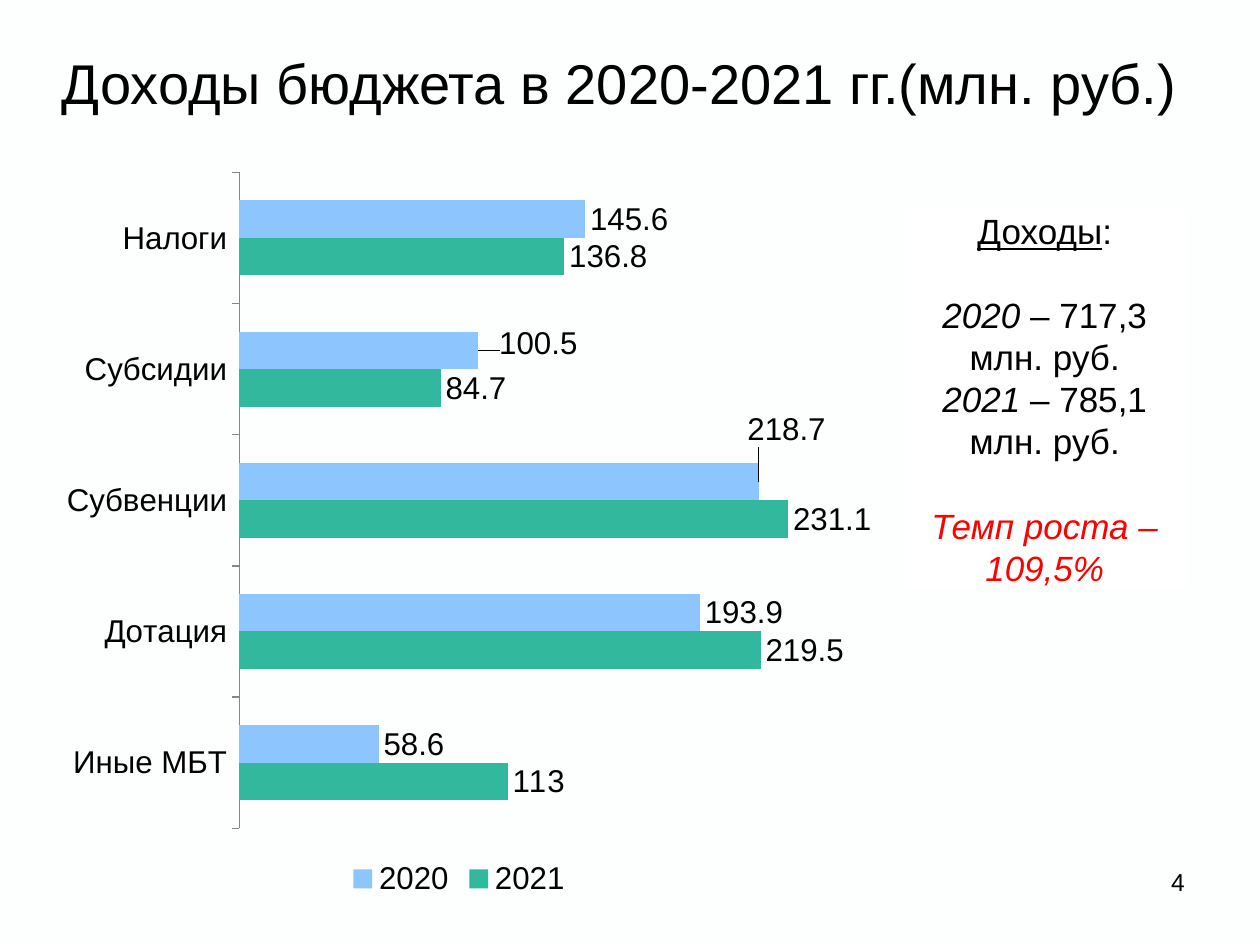
from dataclasses import dataclass

from lxml import etree
from pptx import Presentation
from pptx.chart.data import CategoryChartData
from pptx.dml.color import RGBColor
from pptx.enum.chart import XL_CHART_TYPE, XL_LABEL_POSITION, XL_LEGEND_POSITION, XL_TICK_MARK
from pptx.enum.shapes import MSO_SHAPE
from pptx.enum.text import MSO_ANCHOR, MSO_AUTO_SIZE, PP_ALIGN
from pptx.oxml.ns import qn
from pptx.util import Inches, Pt

BAR = XL_CHART_TYPE.BAR_CLUSTERED
OUTSIDE = XL_LABEL_POSITION.OUTSIDE_END
BOTTOM = XL_LEGEND_POSITION.BOTTOM
TICK_OUT = XL_TICK_MARK.OUTSIDE
RECT = MSO_SHAPE.RECTANGLE
MIDDLE = MSO_ANCHOR.MIDDLE
NO_FIT = MSO_AUTO_SIZE.NONE
CENTER, RIGHT = PP_ALIGN.CENTER, PP_ALIGN.RIGHT


@dataclass(frozen=True)
class Theme:
    """Colours, font and type sizes of the slide."""
    font: str = "Arial"
    ink: str = "000000"
    accent: str = "FF0000"
    back: str = "FDFFFE"
    panel: str = "FFFFFF"
    axis: str = "868686"
    title: int = 32
    body: int = 20
    chart: int = 18
    number: int = 14


THEME = Theme()
WIDTH, HEIGHT = Inches(10), Inches(7.5)
COLS, ROWS = 60, 45
CATEGORIES = ["Иные МБТ", "Дотация", "Субвенции", "Субсидии", "Налоги"]
SERIES = [
    ("2021", [113, 219.5, 231.1, 84.7, 136.8], "32B89C"),
    ("2020", [58.6, 193.9, 218.7, 100.5, 145.6], "8DC6FF"),
]
LABEL_SHIFTS = {2: (-0.02, -0.07), 3: (0.02, -0.01)}
TOTALS = [("2020 ", "– 717,3 млн. руб."), ("2021 ", "– 785,1 млн. руб.")]


def grid(col, row, cols, rows):
    """Return the box that covers the given grid cells."""
    x, y = WIDTH / COLS, HEIGHT / ROWS
    return round(col * x), round(row * y), round(cols * x), round(rows * y)


def rgb(colour):
    """Return a colour object for a hex string."""
    return RGBColor.from_string(colour)


def add_text(p, text, size=THEME.body, colour=THEME.ink, italic=False, underline=False):
    """Add one formatted run to a paragraph."""
    r = p.add_run()
    r.text = text
    r.font.name, r.font.size = THEME.font, Pt(size)
    r.font.color.rgb = rgb(colour)
    r.font.italic, r.font.underline = italic, underline


def add_layout(parent, index, **values):
    """Insert a manual chart layout into a chart element."""
    for old in parent.findall(qn("c:layout")):
        parent.remove(old)
    layout = etree.Element(qn("c:layout"))
    manual = etree.SubElement(layout, qn("c:manualLayout"))
    for tag, value in values.items():
        etree.SubElement(manual, qn(f"c:{tag}")).set("val", str(value))
    parent.insert(index, layout)


def add_title(s, box):
    """Fill and place the title placeholder."""
    sp = s.shapes.title
    sp.left, sp.top, sp.width, sp.height = box
    tf = sp.text_frame
    tf.auto_size, tf.vertical_anchor = NO_FIT, MIDDLE
    p = tf.paragraphs[0]
    p.alignment = CENTER
    add_text(p, "Доходы бюджета в 2020-2021 гг.(млн. руб.)", size=THEME.title)


def format_axes(chart):
    """Hide the value axis and style the category axis."""
    value, category = chart.value_axis, chart.category_axis
    value.visible = value.has_major_gridlines = False
    value.minimum_scale, value.maximum_scale = 0, 250
    category.major_tick_mark = TICK_OUT
    category.format.line.color.rgb = rgb(THEME.axis)


def format_series(plot):
    """Colour the bars and place their value labels."""
    plot.gap_width, plot.overlap, plot.vary_by_categories = 150, 0, False
    for series, (_, _, colour) in zip(plot.series, SERIES):
        series.format.fill.solid()
        series.format.fill.fore_color.rgb = rgb(colour)
        series.data_labels.show_value = True
        series.data_labels.position = OUTSIDE
    last = plot.series[len(SERIES) - 1]
    for index, (x, y) in LABEL_SHIFTS.items():
        last.points[index].data_label.position = OUTSIDE
    for label in last.data_labels._element.findall(qn("c:dLbl")):
        x, y = LABEL_SHIFTS[label.idx_val if hasattr(label, "idx_val") else int(label.find(qn("c:idx")).get("val"))]
        add_layout(label, 1, x=x, y=y)


def add_income_chart(s, box):
    """Add the clustered bar chart of income by source."""
    data = CategoryChartData()
    data.categories = CATEGORIES
    for name, values, _ in SERIES:
        data.add_series(name, values)
    chart = s.shapes.add_chart(BAR, *box, data).chart
    chart.has_title = False
    chart.font.name, chart.font.size = THEME.font, Pt(THEME.chart)
    chart.font.color.rgb = rgb(THEME.ink)
    chart.has_legend = True
    chart.legend.position, chart.legend.include_in_layout = BOTTOM, False
    format_axes(chart)
    format_series(chart.plots[0])
    area = chart._chartSpace.chart.plotArea
    add_layout(area, 0, layoutTarget="inner", xMode="edge", yMode="edge",
               x=0.23, y=0.02, w=0.73, h=0.88)


def add_summary(s, box):
    """Add the panel with yearly totals and the growth rate."""
    sp = s.shapes.add_shape(RECT, *box)
    sp.shadow.inherit = False
    sp.fill.solid()
    sp.fill.fore_color.rgb = rgb(THEME.panel)
    sp.line.fill.background()
    tf = sp.text_frame
    tf.word_wrap, tf.vertical_anchor = True, MIDDLE
    p = tf.paragraphs[0]
    add_text(p, "Доходы", underline=True)
    add_text(p, ":")
    p.space_after = Pt(24)
    for year, total in TOTALS:
        p = tf.add_paragraph()
        add_text(p, year, italic=True)
        add_text(p, total)
    p.space_after = Pt(24)
    add_text(tf.add_paragraph(), "Темп роста – 109,5%", colour=THEME.accent, italic=True)
    for p in tf.paragraphs:
        p.alignment = CENTER


def add_number(s, box):
    """Add the slide number."""
    tf = s.shapes.add_textbox(*box).text_frame
    tf.word_wrap = True
    p = tf.paragraphs[0]
    p.alignment = RIGHT
    add_text(p, "4", size=THEME.number)


def main():
    """Build and save the slide."""
    prs = Presentation()
    prs.slide_width, prs.slide_height = WIDTH, HEIGHT
    s = prs.slides.add_slide(prs.slide_layouts[5])
    s.background.fill.solid()
    s.background.fill.fore_color.rgb = rgb(THEME.back)
    add_title(s, grid(1, 1.8, 57, 4.2))
    add_income_chart(s, grid(2.5, 7.5, 39, 35.5))
    add_number(s, grid(43, 41, 14, 3))
    add_summary(s, grid(43, 10, 13.5, 18))
    prs.save("out.pptx")


if __name__ == "__main__":
    main()
